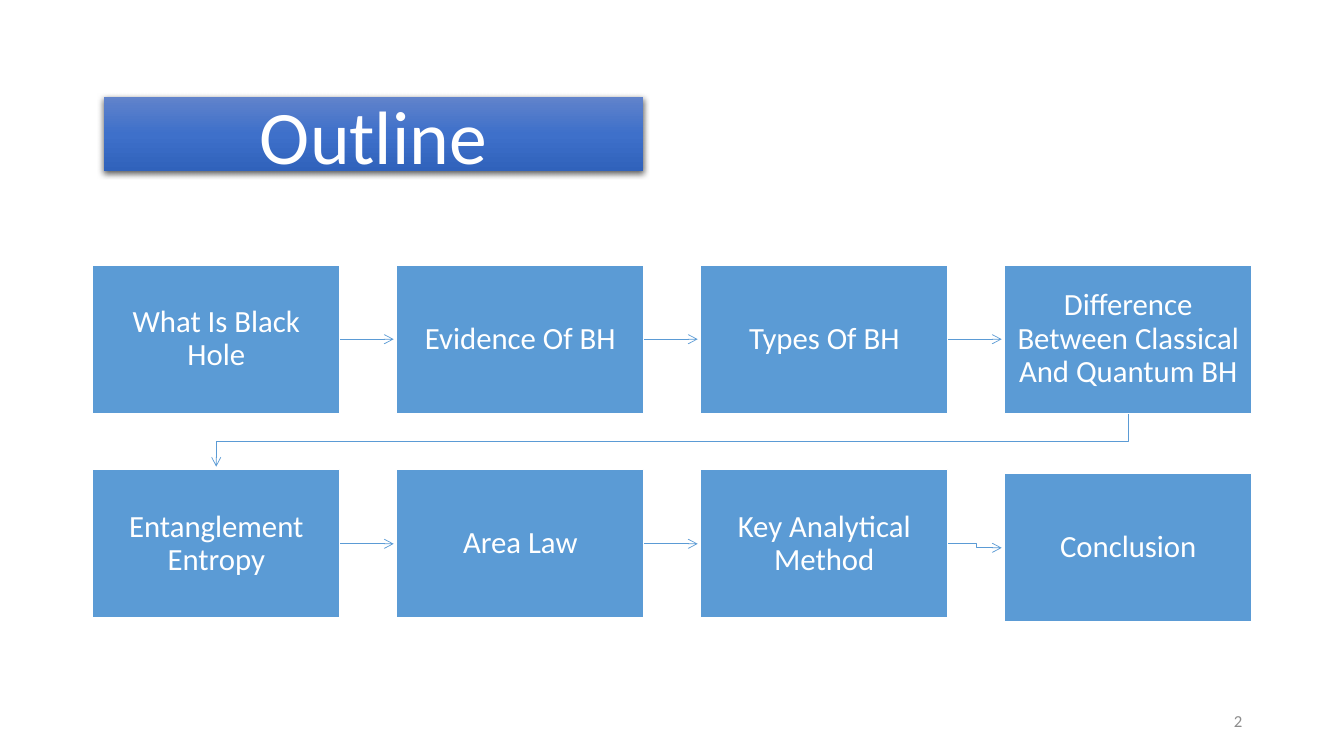
from copy import deepcopy
from dataclasses import dataclass

from lxml import etree
from pptx import Presentation
from pptx.dml import color
from pptx.enum import shapes, text
from pptx.oxml import ns
from pptx.util import Inches, Pt

COLORS = {
    "white": "FFFFFF",
    "blue": "5B9BD5",
    "grey": "8C8C8C",
    "title_top": "6183CB",
    "title_middle": "3E70CA",
    "title_bottom": "3062BB",
    "shadow": "000000",
}
FONT = "Calibri"
STEP_WIDTH, STEP_HEIGHT = 2.45, 1.47
LEFT, TOP = 0.92, 2.63
COLUMN_PITCH, ROW_PITCH = 3.015, 2.03
ARROW_GAP = 0.03  # space between an arrowhead and the next step


@dataclass(frozen=True)
class Step:
    label: str
    column: int
    row: int
    drop: float = 0.0

    @property
    def left(self) -> float:
        return LEFT + self.column * COLUMN_PITCH

    @property
    def top(self) -> float:
        return TOP + self.row * ROW_PITCH + self.drop

    @property
    def center(self) -> float:
        return self.left + STEP_WIDTH / 2

    @property
    def middle(self) -> float:
        return self.top + STEP_HEIGHT / 2


STEPS = [
    Step("What Is Black Hole", 0, 0),
    Step("Evidence Of BH", 1, 0),
    Step("Types Of BH", 2, 0),
    Step("Difference Between Classical And Quantum BH", 3, 0),
    Step("Entanglement Entropy", 0, 1),
    Step("Area Law", 1, 1),
    Step("Key Analytical Method", 2, 1),
    Step("Conclusion", 3, 1, drop=0.04),
]


def rgb(name: str) -> color.RGBColor:
    return color.RGBColor.from_string(COLORS[name])


def write(shape, words: str, size: float, color_name: str, align) -> None:
    frame = shape.text_frame
    frame.text = words
    frame.word_wrap = True
    frame.vertical_anchor = text.MSO_ANCHOR.MIDDLE
    paragraph = frame.paragraphs[0]
    paragraph.alignment = align
    font = paragraph.runs[0].font
    font.name, font.size = FONT, Pt(size)
    font.color.rgb = rgb(color_name)


def add_box(slide, left: float, top: float, width: float, height: float):
    box = slide.shapes.add_shape(
        shapes.MSO_SHAPE.RECTANGLE,
        Inches(left), Inches(top), Inches(width), Inches(height),
    )
    box.shadow.inherit = False
    return box


def add_title(slide) -> None:
    """Draw the title bar with its three-stop gradient and soft shadow."""
    title = add_box(slide, 1.03, 0.96, 5.35, 0.74)
    title.line.fill.background()
    title.fill.gradient()
    title.fill.gradient_angle = 270
    stop_list = title.fill._fill._gradFill.find(ns.qn("a:gsLst"))
    stop_list.insert(1, deepcopy(stop_list[0]))
    names = ("title_top", "title_middle", "title_bottom")
    for stop, name, position in zip(title.fill.gradient_stops, names, (0, 0.5, 1)):
        stop.color.rgb = rgb(name)
        stop.position = position

    effects = title._element.spPr.find(ns.qn("a:effectLst"))
    shadow = etree.SubElement(
        effects, ns.qn("a:outerShdw"), blurRad=str(Pt(4.5)), dist=str(Pt(1.5)),
        dir="5400000", algn="ctr", rotWithShape="0",
    )
    tint = etree.SubElement(shadow, ns.qn("a:srgbClr"), val=COLORS["shadow"])
    etree.SubElement(tint, ns.qn("a:alpha"), val="63000")
    write(title, "Outline", 54, "white", text.PP_ALIGN.CENTER)


def add_step(slide, step: Step) -> None:
    box = add_box(slide, step.left, step.top, STEP_WIDTH, STEP_HEIGHT)
    box.fill.solid()
    box.fill.fore_color.rgb = rgb("blue")
    box.line.color.rgb = rgb("white")
    box.line.width = Pt(1)
    write(box, step.label, 22, "white", text.PP_ALIGN.CENTER)
    box.text_frame.paragraphs[0].line_spacing = 0.9
    frame = box.text_frame
    frame.margin_left = frame.margin_right = Inches(0.11)
    frame.margin_top = frame.margin_bottom = Inches(0.13)


def arrow_route(start: Step, end: Step) -> list[tuple[float, float]]:
    """Return the corner points that lead from one step to the next."""
    if start.row != end.row:
        bottom = start.top + STEP_HEIGHT
        bend = (bottom + end.top) / 2
        return [(start.center, bottom), (start.center, bend),
                (end.center, bend), (end.center, end.top - ARROW_GAP)]
    right, tip = start.left + STEP_WIDTH, end.left - ARROW_GAP
    if start.middle == end.middle:
        return [(right, start.middle), (tip, end.middle)]
    bend = (right + end.left) / 2
    return [(right, start.middle), (bend, start.middle),
            (bend, end.middle), (tip, end.middle)]


def add_arrow(slide, start: Step, end: Step) -> None:
    points = [(Inches(x), Inches(y)) for x, y in arrow_route(start, end)]
    if len(points) == 2:
        arrow = slide.shapes.add_connector(
            shapes.MSO_CONNECTOR.STRAIGHT, *points[0], *points[1])
    else:
        builder = slide.shapes.build_freeform(*points[0])
        builder.add_line_segments(points[1:], close=False)
        arrow = builder.convert_to_shape()
        arrow.fill.background()
    arrow.line.color.rgb = rgb("blue")
    arrow.line.width = Pt(0.5)
    etree.SubElement(arrow.line._get_or_add_ln(), ns.qn("a:tailEnd"), type="arrow")
    etree.SubElement(arrow._element.spPr, ns.qn("a:effectLst"))


def add_page_number(slide) -> None:
    number = slide.shapes.add_textbox(Inches(9.42), Inches(6.95), Inches(3), Inches(0.4))
    write(number, "2", 12, "grey", text.PP_ALIGN.RIGHT)


def main() -> None:
    deck = Presentation()
    deck.slide_width, deck.slide_height = Inches(13.33), Inches(7.5)
    slide = deck.slides.add_slide(deck.slide_layouts[6])
    add_page_number(slide)
    for start, end in zip(STEPS, STEPS[1:]):
        add_arrow(slide, start, end)
    for step in STEPS:
        add_step(slide, step)
    add_title(slide)
    deck.save("out.pptx")


if __name__ == "__main__":
    main()
